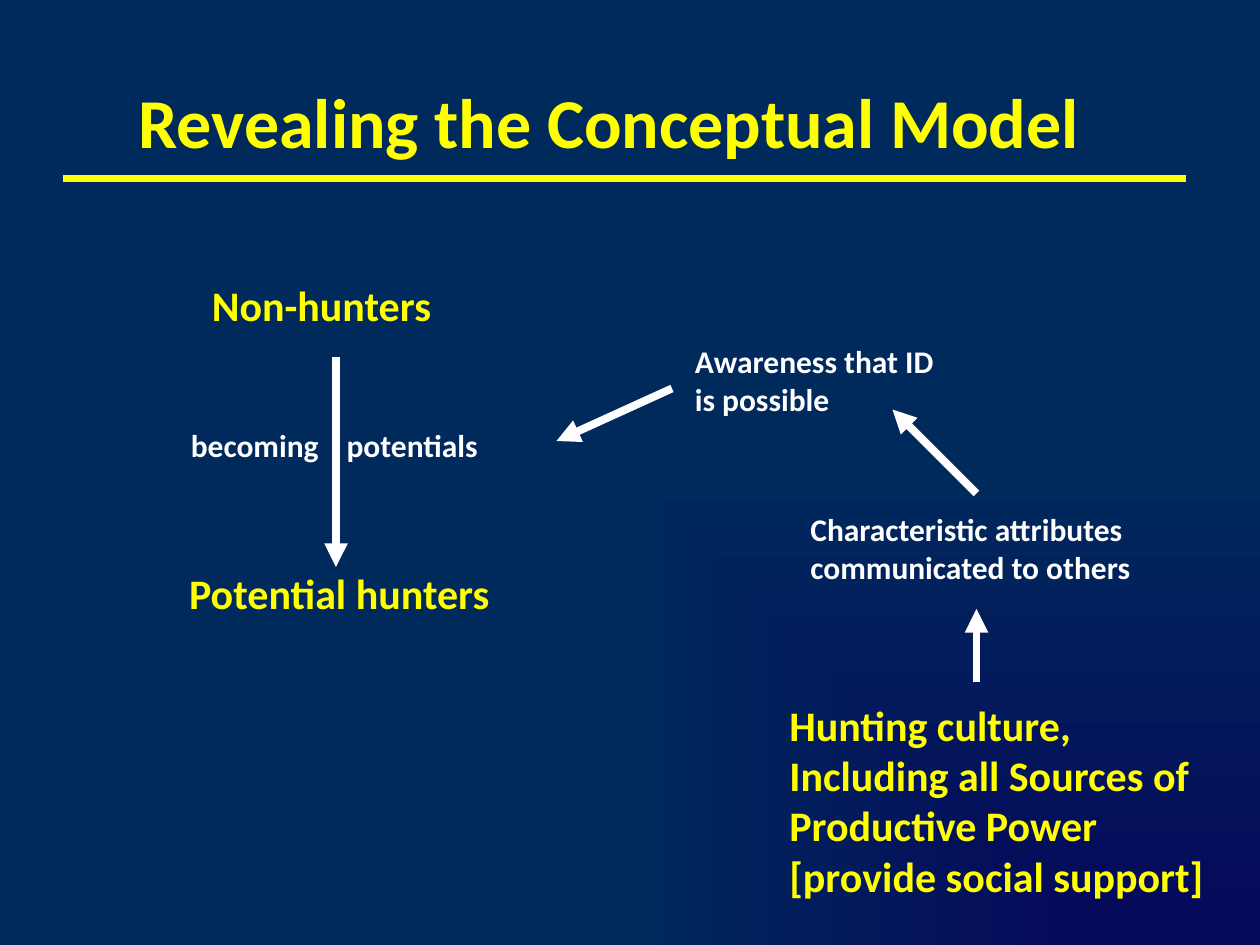
from dataclasses import dataclass

from lxml import etree
from pptx import Presentation
from pptx import util as u
from pptx.dml.color import RGBColor
from pptx.enum import shapes, text
from pptx.oxml import ns


@dataclass(frozen=True)
class Theme:
    font: str = "Calibri"
    yellow: str = "FFFF00"
    white: str = "FFFFFF"
    corner: str = "06085A"
    background: str = "00295C"
    title_size: float = 40
    concept_size: float = 24
    process_size: float = 18
    line_width: float = 4.5


@dataclass(frozen=True)
class Label:
    lines: tuple[str, ...]
    box: tuple[float, float, float, float]
    is_concept: bool = False
    wrap: bool = False
    tab_stop: float | None = None


@dataclass(frozen=True)
class Line:
    start: tuple[float, float]
    end: tuple[float, float]
    color: str
    has_arrowhead: bool = True


THEME = Theme()

LABELS = [
    Label(("Non-hunters",), (114, 156, 141, 36), is_concept=True),
    Label(("Potential hunters",), (101, 321, 188, 36), is_concept=True),
    Label(("Hunting culture,", "Including all Sources of Productive Power",
           "[provide social support]"), (444, 396, 252, 124), is_concept=True, wrap=True),
    Label(("Awareness that ID", "is possible"), (390, 192, 152, 51)),
    Label(("Characteristic attributes", "communicated to others"), (456, 288, 199, 51)),
    Label(("becoming\tpotentials",), (102, 240, 180, 29), wrap=True, tab_stop=89),
]

LINES = [
    Line((36, 102), (678, 102), THEME.yellow, has_arrowhead=False),
    Line((192, 204), (192, 324), THEME.white),
    Line((558, 390), (558, 348), THEME.white),
    Line((558, 282), (510, 234), THEME.white),
    Line((384, 222), (318, 252), THEME.white),
]


def add_child(parent, tag: str, **attributes: str):
    return etree.SubElement(parent, ns.qn(tag), attributes)


def paint_background(slide) -> None:
    """Fill with a rectangular gradient centred on the bottom right corner."""
    fill = slide.background.fill
    fill.gradient()
    for stop, color, position in zip(
            fill.gradient_stops, (THEME.corner, THEME.background), (0, 1)):
        stop.color.rgb = RGBColor.from_string(color)
        stop.position = position
    gradient = slide.element.xpath(".//p:bg//a:gradFill")[0]
    gradient.remove(gradient.find(ns.qn("a:lin")))
    shade = add_child(gradient, "a:path", path="rect")
    add_child(shade, "a:fillToRect", l="100000", t="100000")


def write_text(frame, lines: tuple[str, ...], *, size: float, color: str,
               align=text.PP_ALIGN.LEFT, tab_stop: float | None = None) -> None:
    for index, line in enumerate(lines):
        paragraph = frame.paragraphs[0] if index == 0 else frame.add_paragraph()
        paragraph.text = line
        paragraph.alignment = align
        if tab_stop is not None:
            tabs = add_child(paragraph._p.get_or_add_pPr(), "a:tabLst")
            add_child(tabs, "a:tab", pos=str(u.Pt(tab_stop)), algn="l")
        for run in paragraph.runs:
            run.font.name = THEME.font
            run.font.size = u.Pt(size)
            run.font.bold = True
            run.font.color.rgb = RGBColor.from_string(color)


def add_title(slide, title: str) -> None:
    shape = slide.shapes.title
    shape.left, shape.top, shape.width, shape.height = map(u.Pt, (24, 24, 648, 90))
    shape.text_frame.vertical_anchor = text.MSO_ANCHOR.MIDDLE
    write_text(shape.text_frame, (title,), size=THEME.title_size, color=THEME.yellow,
               align=text.PP_ALIGN.CENTER)


def add_label(slide, label: Label) -> None:
    frame = slide.shapes.add_textbox(*map(u.Pt, label.box)).text_frame
    frame.word_wrap = label.wrap
    frame.auto_size = text.MSO_AUTO_SIZE.SHAPE_TO_FIT_TEXT
    write_text(frame, label.lines, tab_stop=label.tab_stop,
               size=THEME.concept_size if label.is_concept else THEME.process_size,
               color=THEME.yellow if label.is_concept else THEME.white)


def add_line(slide, line: Line) -> None:
    connector = slide.shapes.add_connector(
        shapes.MSO_CONNECTOR.STRAIGHT, *map(u.Pt, line.start + line.end))
    connector.line.width = u.Pt(THEME.line_width)
    connector.line.color.rgb = RGBColor.from_string(line.color)
    properties = connector.element.spPr
    if line.has_arrowhead:
        add_child(properties.find(ns.qn("a:ln")), "a:tailEnd", type="triangle")
    add_child(properties, "a:effectLst")


def main() -> None:
    presentation = Presentation()
    presentation.slide_width, presentation.slide_height = u.Pt(720), u.Pt(540)
    slide = presentation.slides.add_slide(presentation.slide_layouts[5])
    paint_background(slide)
    add_title(slide, "Revealing the Conceptual Model")
    for label in LABELS:
        add_label(slide, label)
    for line in LINES:
        add_line(slide, line)
    presentation.save("out.pptx")


if __name__ == "__main__":
    main()
